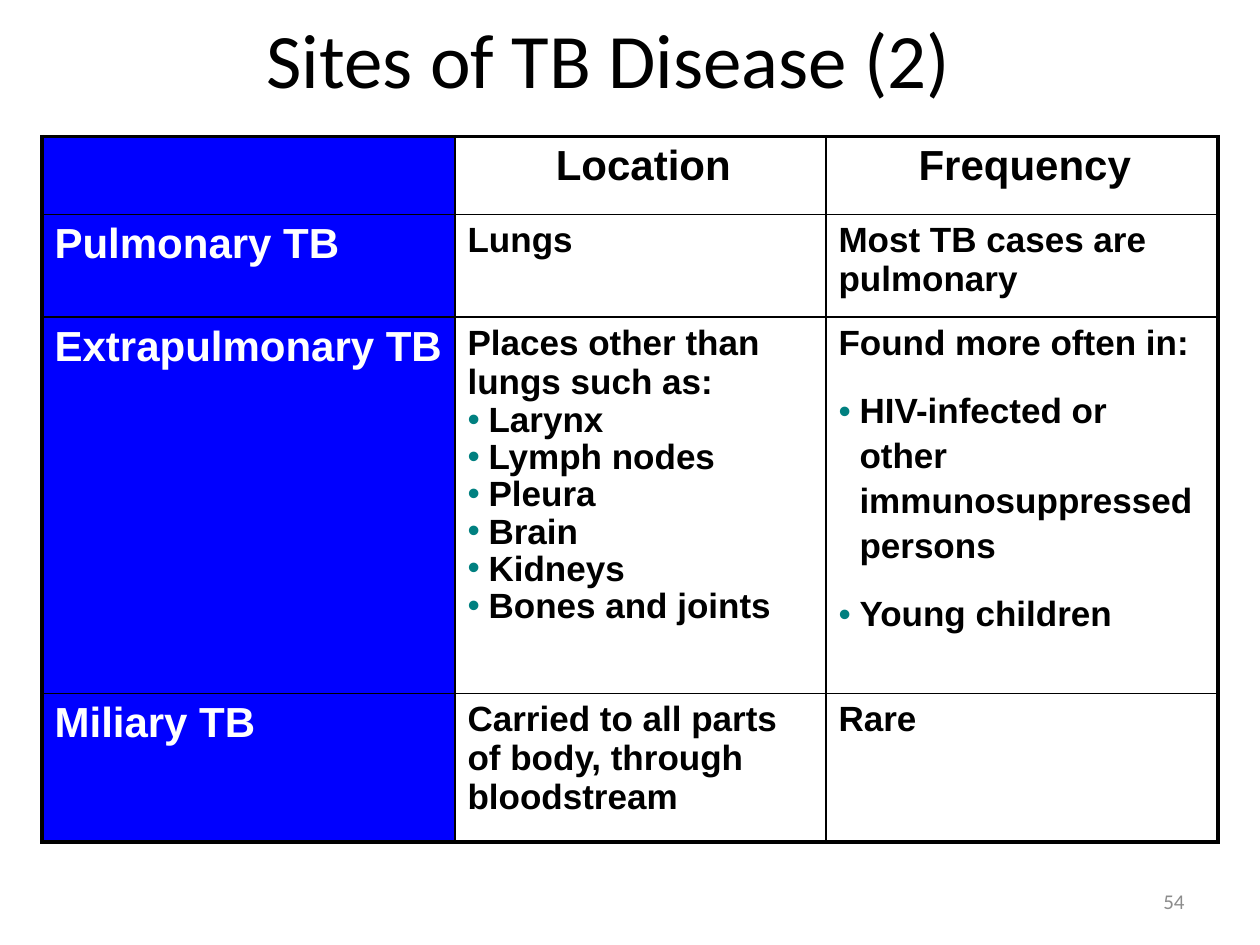
from lxml import etree
from pptx import Presentation
from pptx.dml.color import RGBColor
from pptx.enum.text import MSO_ANCHOR, PP_ALIGN
from pptx.oxml.ns import qn
from pptx.util import Pt

LEFT, CENTER, RIGHT = PP_ALIGN.LEFT, PP_ALIGN.CENTER, PP_ALIGN.RIGHT
MIDDLE = MSO_ANCHOR.MIDDLE

BLACK, WHITE, BLUE, TEAL, GRAY = "000000", "FFFFFF", "0000FF", "008080", "8C8C8C"
COLUMN_WIDTHS = [236, 212, 224]
ROW_HEIGHTS = [44.6, 58.6, 215, 85]
OUTER_LINE, INNER_LINE = 2.25, 1
HANGING_INDENT = 12
PARAGRAPH_GAP, GROUP_GAP = 3.4, 16.6

SITES = ["Larynx", "Lymph nodes", "Pleura", "Brain", "Kidneys", "Bones and joints"]

# Each cell lists its paragraphs as (text, options)
ROWS = [
    [[], [("Location", {})], [("Frequency", {})]],
    [[("Pulmonary TB", {})],
     [("Lungs", {})],
     [("Most TB cases are pulmonary", {})]],
    [[("Extrapulmonary TB", {})],
     [("Places other than lungs such as:", {})]
     + [(site, {"bullet": True, "line_spacing": 0.8}) for site in SITES],
     [("Found more often in:", {}),
      ("HIV-infected or", {"bullet": True, "gap": GROUP_GAP}),
      ("other", {"indented": True}),
      ("immunosuppressed", {"indented": True}),
      ("persons", {"indented": True}),
      ("Young children", {"bullet": True, "gap": GROUP_GAP})]],
    [[("Miliary TB", {})],
     [("Carried to all parts of body, through bloodstream", {})],
     [("Rare", {})]],
]


def rgb(color):
    return RGBColor.from_string(color)


def set_font(font, name, size, color, bold=False):
    font.name, font.size, font.bold = name, Pt(size), bold
    font.color.rgb = rgb(color)


def add_label(slide, box, text, size, color, alignment):
    shape = slide.shapes.add_textbox(*map(Pt, box))
    frame = shape.text_frame
    frame.word_wrap = True
    frame.vertical_anchor = MIDDLE
    paragraph = frame.paragraphs[0]
    paragraph.text = text
    paragraph.alignment = alignment
    set_font(paragraph.font, "Calibri", size, color)


def set_indent(paragraph, bullet):
    properties = paragraph._p.get_or_add_pPr()
    properties.set("marL", str(Pt(HANGING_INDENT)))
    if bullet:
        properties.set("indent", str(-Pt(HANGING_INDENT)))
        color = etree.SubElement(properties, qn("a:buClr"))
        etree.SubElement(color, qn("a:srgbClr"), val=TEAL)
        etree.SubElement(properties, qn("a:buFont"), typeface="Arial")
        etree.SubElement(properties, qn("a:buChar"), char="•")


def set_borders(cell, row, column):
    outer_sides = {
        "a:lnL": column == 0,
        "a:lnR": column == len(COLUMN_WIDTHS) - 1,
        "a:lnT": row == 0,
        "a:lnB": row == len(ROW_HEIGHTS) - 1,
    }
    properties = cell._tc.get_or_add_tcPr()
    # Lines must stand before the fill
    for position, (tag, is_outer) in enumerate(outer_sides.items()):
        width = Pt(OUTER_LINE if is_outer else INNER_LINE)
        line = etree.Element(qn(tag), w=str(width))
        fill = etree.SubElement(line, qn("a:solidFill"))
        etree.SubElement(fill, qn("a:srgbClr"), val=BLACK)
        properties.insert(position, line)


def fill_cell(cell, paragraphs, row, column):
    is_heading = row == 0 or column == 0
    if column == 0:
        cell.fill.solid()
        cell.fill.fore_color.rgb = rgb(BLUE)
    else:
        cell.fill.background()
    cell.margin_right = Pt(4)
    set_borders(cell, row, column)

    frame = cell.text_frame
    for index, (text, options) in enumerate(paragraphs):
        paragraph = frame.add_paragraph() if index else frame.paragraphs[0]
        paragraph.text = text
        paragraph.alignment = CENTER if row == 0 else LEFT
        paragraph.line_spacing = options.get("line_spacing", 1.0)
        paragraph.space_before = Pt(options.get("gap", PARAGRAPH_GAP) if index else 0)
        bullet = options.get("bullet", False)
        if bullet or options.get("indented"):
            set_indent(paragraph, bullet)
        set_font(paragraph.font, "Arial", 24 if is_heading else 20,
                 WHITE if column == 0 else BLACK, bold=True)


def add_sites_table(slide, left, top):
    box = (left, top, sum(COLUMN_WIDTHS), sum(ROW_HEIGHTS))
    table = slide.shapes.add_table(len(ROW_HEIGHTS), len(COLUMN_WIDTHS),
                                   *map(Pt, box)).table
    table.first_row = table.horz_banding = False
    for column, width in zip(table.columns, COLUMN_WIDTHS):
        column.width = Pt(width)
    for row, height in zip(table.rows, ROW_HEIGHTS):
        row.height = Pt(height)
    for row, cells in enumerate(ROWS):
        for column, paragraphs in enumerate(cells):
            fill_cell(table.cell(row, column), paragraphs, row, column)


def main():
    presentation = Presentation()
    presentation.slide_width, presentation.slide_height = Pt(720), Pt(540)
    slide = presentation.slides.add_slide(presentation.slide_layouts[6])

    # Title, table and slide number
    add_label(slide, (24, 0, 648, 66), "Sites of TB Disease (2)", 44, BLACK, CENTER)
    add_sites_table(slide, 24, 78)
    add_label(slide, (516, 500.5, 168, 28.8), "54", 12, GRAY, RIGHT)

    presentation.save("out.pptx")


if __name__ == "__main__":
    main()
